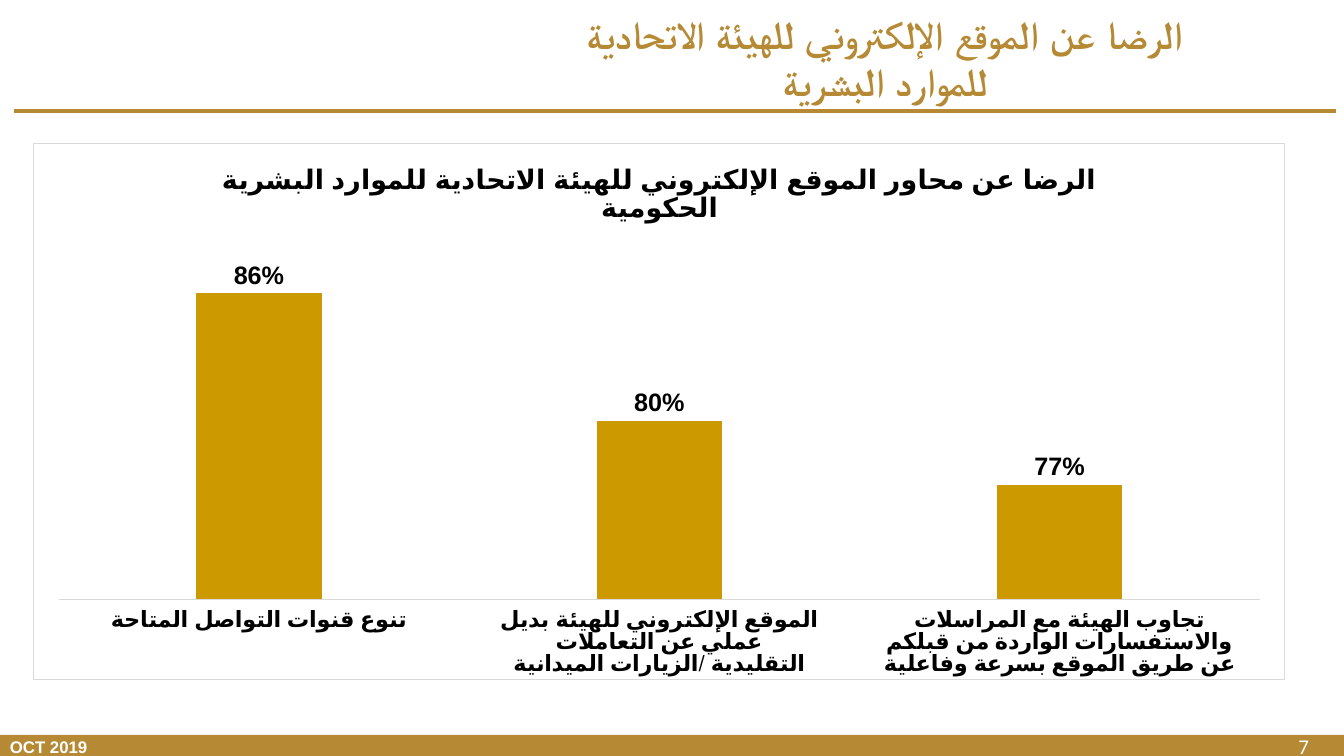
"""Build the slide on satisfaction with the authority's website."""
from lxml.etree import SubElement
from pptx import Presentation
from pptx.chart.data import CategoryChartData
from pptx.dml.color import RGBColor
from pptx.enum.chart import XL_CHART_TYPE as ChartType, XL_LABEL_POSITION as LabelPos
from pptx.enum.chart import XL_TICK_LABEL_POSITION as TickLabels, XL_TICK_MARK as TickMark
from pptx.enum.shapes import MSO_CONNECTOR as Connector, MSO_SHAPE as Shape
from pptx.enum.text import MSO_ANCHOR as Anchor, PP_ALIGN as Align
from pptx.oxml import parse_xml
from pptx.oxml.ns import nsdecls, qn
from pptx.util import Inches, Pt

HEADING = "الرضا عن الموقع الإلكتروني للهيئة الاتحادية للموارد البشرية"
CHART_TITLE = "الرضا عن محاور الموقع الإلكتروني للهيئة الاتحادية للموارد البشرية الحكومية"
SATISFACTION = {
    "تجاوب الهيئة مع المراسلات والاستفسارات الواردة من قبلكم عن طريق الموقع بسرعة وفاعلية": 0.77,
    "الموقع الإلكتروني للهيئة بديل عملي عن التعاملات التقليدية /الزيارات الميدانية": 0.80,
    "تنوع قنوات التواصل المتاحة": 0.86,
}
ISSUE_DATE = "OCT 2019"
PAGE_NUMBER = "7"

THEME = {
    "gold": "B68A35", "bar": "CC9900", "ink": "000000", "paper": "FFFFFF", "rule": "D9D9D9",
    "font": "Arial", "number_font": "Calibri",
    "heading": 28, "chart_title": 19.2, "value": 18, "category": 16, "page": 15, "date": 12,
}
PLOT_AREA = {"x": 0.02, "y": 0.2, "w": 0.96, "h": 0.65}


def color(name):
    return RGBColor.from_string(THEME[name])


def set_font(font, size, ink, bold=True, face="font"):
    font.name, font.size, font.bold = THEME[face], Pt(THEME[size]), bold
    font.color.rgb = color(ink)


def add_text(slide, text, box, size, ink, bold=True, face="font"):
    frame = slide.shapes.add_textbox(*map(Inches, box)).text_frame
    frame.word_wrap = True
    line = frame.paragraphs[0]
    line.text = text
    set_font(line.font, size, ink, bold, face)
    return frame


def add_frame(slide):
    footer = slide.shapes.add_shape(Shape.RECTANGLE, 0, Inches(7.29), Inches(13.33), Inches(0.21))
    footer.shadow.inherit = False
    footer.fill.solid()
    footer.fill.fore_color.rgb = color("gold")
    footer.line.fill.background()
    add_text(slide, PAGE_NUMBER, (12.78, 7.23, 0.78, 0.4), "page", "paper", False, "number_font")
    rule = slide.shapes.add_connector(
        Connector.STRAIGHT, Inches(0.14), Inches(1.1), Inches(13.25), Inches(1.1))
    rule.line.color.rgb = color("gold")
    rule.line.width = Pt(3)
    SubElement(rule._element.spPr, qn("a:effectLst"))
    add_text(slide, ISSUE_DATE, (0, 7.26, 2.11, 0.4), "date", "paper")


def add_heading(slide):
    frame = add_text(slide, HEADING, (5.26, 0.17, 7.03, 0.8), "heading", "gold")
    frame.vertical_anchor = Anchor.MIDDLE
    line = frame.paragraphs[0]
    line.alignment = Align.CENTER
    line._p.get_or_add_pPr().set("rtl", "1")


def place_plot_and_border(chart):
    space = chart._chartSpace
    plot_area = space.chart.plotArea
    for layout in plot_area.findall(qn("c:layout")):
        plot_area.remove(layout)
    sides = "".join(f'<c:{side} val="{share}"/>' for side, share in PLOT_AREA.items())
    plot_area.insert(0, parse_xml(
        f'<c:layout {nsdecls("c")}><c:manualLayout><c:layoutTarget val="inner"/>'
        f'<c:xMode val="edge"/><c:yMode val="edge"/>{sides}</c:manualLayout></c:layout>'))
    space.chart.addnext(parse_xml(
        f'<c:spPr {nsdecls("c", "a")}><a:noFill/><a:ln w="{Pt(0.75)}"><a:solidFill>'
        f'<a:srgbClr val="{THEME["rule"]}"/></a:solidFill></a:ln></c:spPr>'))


def add_satisfaction_chart(slide):
    data = CategoryChartData(number_format="0%")
    data.categories = list(SATISFACTION)
    data.add_series("Series 1", list(SATISFACTION.values()))
    chart = slide.shapes.add_chart(
        ChartType.COLUMN_CLUSTERED, *map(Inches, (0.33, 1.42, 12.42, 5.33)), data).chart
    set_font(chart.font, "category", "ink")
    chart.has_legend = False
    title = chart.chart_title.text_frame.paragraphs[0]
    title.text = CHART_TITLE
    set_font(title.font, "chart_title", "ink")
    title._p.get_or_add_pPr().set("rtl", "1")
    chart.chart_title.include_in_layout = False

    categories, values = chart.category_axis, chart.value_axis
    categories.reverse_order = True
    categories.major_tick_mark = categories.minor_tick_mark = TickMark.NONE
    categories.tick_label_position = TickLabels.LOW
    categories.format.line.color.rgb = color("rule")
    categories.format.line.width = Pt(0.75)
    set_font(categories.tick_labels.font, "category", "ink")
    values.minimum_scale, values.maximum_scale = 0.716, 0.88
    values.has_major_gridlines = False
    values.visible = False

    plot = chart.plots[0]
    plot.vary_by_categories = False
    plot.gap_width, plot.overlap = 219, -27
    bars = plot.series[0]
    bars.format.fill.solid()
    bars.format.fill.fore_color.rgb = color("bar")
    labels = bars.data_labels
    labels.show_value = True
    labels.number_format, labels.number_format_is_linked = "0%", False
    labels.position = LabelPos.OUTSIDE_END
    set_font(labels.font, "value", "ink")
    place_plot_and_border(chart)


def main():
    deck = Presentation()
    deck.slide_width, deck.slide_height = Inches(13.33), Inches(7.5)
    slide = deck.slides.add_slide(deck.slide_layouts[6])
    add_frame(slide)
    add_heading(slide)
    add_satisfaction_chart(slide)
    deck.save("out.pptx")


if __name__ == "__main__":
    main()
